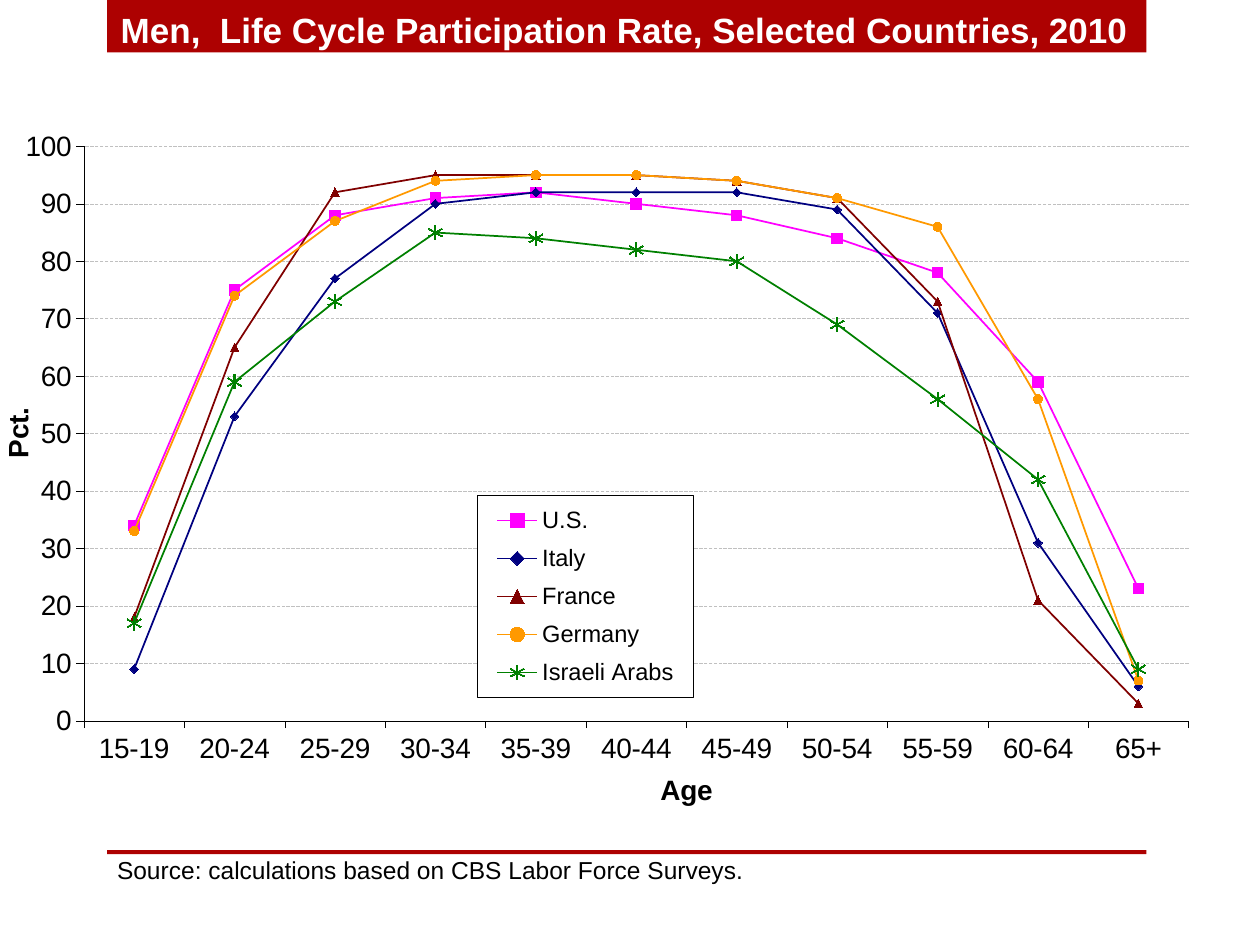
from dataclasses import dataclass

from pptx import Presentation
from pptx import util as u
from pptx.chart.data import CategoryChartData
from pptx.dml.color import RGBColor
from pptx.enum import chart as ch, dml, shapes, text
from pptx.oxml import parse_xml
from pptx.oxml.ns import nsdecls


@dataclass(frozen=True)
class Theme:
    font: str = "Arial"
    accent: str = "AD0101"
    ink: str = "000000"
    paper: str = "FFFFFF"
    grid: str = "C0C0C0"
    title_size: float = 20
    axis_size: float = 16
    legend_size: float = 13.5
    source_size: float = 14
    hairline: float = 0.25
    series_line: float = 1


AGES = ["15-19", "20-24", "25-29", "30-34", "35-39", "40-44",
        "45-49", "50-54", "55-59", "60-64", "65+"]
MARK = ch.XL_MARKER_STYLE
# country, colour, marker, marker size, participation rate by age
COUNTRIES = [
    ("U.S.", "FF00FF", MARK.SQUARE, 6, [34, 75, 88, 91, 92, 90, 88, 84, 78, 59, 23]),
    ("Italy", "000080", MARK.DIAMOND, 5, [9, 53, 77, 90, 92, 92, 92, 89, 71, 31, 6]),
    ("France", "800000", MARK.TRIANGLE, 5, [18, 65, 92, 95, 95, 95, 94, 91, 73, 21, 3]),
    ("Germany", "FF9900", MARK.CIRCLE, 5, [33, 74, 87, 94, 95, 95, 94, 91, 86, 56, 7]),
    ("Israeli Arabs", "008000", MARK.STAR, 8, [17, 59, 73, 85, 84, 82, 80, 69, 56, 42, 9]),
]


def style_font(font, theme, size, color, bold=False):
    font.name, font.size, font.bold = theme.font, u.Pt(size), bold
    font.color.rgb = RGBColor.from_string(color)


def write(frame, words, *, theme, size, color, bold=False, align=None):
    """Put one formatted paragraph into a text frame."""
    line = frame.paragraphs[0]
    line.alignment = align
    run = line.add_run()
    run.text = words
    style_font(run.font, theme, size, color, bold)


def stroke(line, color, width):
    line.color.rgb = RGBColor.from_string(color)
    line.width = u.Pt(width)


def place(part, index, x, y, w=None, h=None, inner=False):
    """Give a chart part a fixed place, in fractions of the chart."""
    for old in part.xpath("c:layout"):
        part.remove(old)
    size = f'<c:w val="{w}"/><c:h val="{h}"/>' if w else ""
    target = '<c:layoutTarget val="inner"/>' if inner else ""
    part.insert(index, parse_xml(
        f'<c:layout {nsdecls("c")}><c:manualLayout>{target}'
        '<c:xMode val="edge"/><c:yMode val="edge"/>'
        f'<c:x val="{x}"/><c:y val="{y}"/>{size}</c:manualLayout></c:layout>'))


class SlideBuilder:
    def __init__(self, slide, theme):
        self.slide, self.theme = slide, theme

    def bar(self, *box):
        band = self.slide.shapes.add_shape(
            shapes.MSO_SHAPE.RECTANGLE, *map(u.Cm, box))
        band.shadow.inherit = False
        band.fill.solid()
        band.fill.fore_color.rgb = RGBColor.from_string(self.theme.accent)
        band.line.fill.background()

    def title(self, words, *box):
        heading = self.slide.shapes.title
        heading.left, heading.top, heading.width, heading.height = map(u.Cm, box)
        heading.text_frame.vertical_anchor = text.MSO_ANCHOR.MIDDLE
        heading.text_frame.auto_size = text.MSO_AUTO_SIZE.SHAPE_TO_FIT_TEXT
        write(heading.text_frame, words, theme=self.theme,
              size=self.theme.title_size, color=self.theme.paper,
              bold=True, align=text.PP_ALIGN.CENTER)
        # Bring the title in front of its band
        heading.element.getparent().append(heading.element)

    def note(self, words, *box):
        source = self.slide.shapes.add_textbox(*map(u.Cm, box)).text_frame
        source.word_wrap = True
        source.auto_size = text.MSO_AUTO_SIZE.SHAPE_TO_FIT_TEXT
        write(source, words, theme=self.theme,
              size=self.theme.source_size, color=self.theme.ink)

    def axis(self, axis, caption):
        theme = self.theme
        write(axis.axis_title.text_frame, caption, theme=theme,
              size=theme.axis_size, color=theme.ink, bold=True)
        style_font(axis.tick_labels.font, theme, theme.axis_size, theme.ink)
        axis.tick_labels.number_format = "0"
        axis.tick_labels.number_format_is_linked = False
        axis.major_tick_mark = ch.XL_TICK_MARK.OUTSIDE
        stroke(axis.format.line, theme.ink, theme.hairline)

    def line_chart(self, *box):
        theme = self.theme
        data = CategoryChartData(number_format="0")
        data.categories = AGES
        for country, *_, rates in COUNTRIES:
            data.add_series(country, rates)
        chart = self.slide.shapes.add_chart(
            ch.XL_CHART_TYPE.LINE_MARKERS, *map(u.Cm, box), data).chart
        chart.has_title = False
        style_font(chart.font, theme, theme.axis_size, theme.ink)
        chart.plots[0].vary_by_categories = False

        # Country lines and markers
        for line, (_, color, symbol, size, _) in zip(chart.plots[0].series, COUNTRIES):
            line.smooth = False
            stroke(line.format.line, color, theme.series_line)
            line.marker.style, line.marker.size = symbol, size
            stroke(line.marker.format.line, color, theme.series_line)
            if symbol == MARK.STAR:
                line.marker.format.fill.background()
            else:
                line.marker.format.fill.solid()
                line.marker.format.fill.fore_color.rgb = RGBColor.from_string(color)

        # Axes and gridlines
        self.axis(chart.category_axis, "Age")
        self.axis(chart.value_axis, "Pct.")
        rate = chart.value_axis
        rate.minimum_scale, rate.maximum_scale, rate.major_unit = 0, 100, 10
        grid = rate.major_gridlines.format.line
        stroke(grid, theme.grid, theme.hairline)
        grid.dash_style = dml.MSO_LINE.LONG_DASH

        # Legend inside the plot
        chart.has_legend = True
        chart.legend.position = ch.XL_LEGEND_POSITION.RIGHT
        chart.legend.include_in_layout = False
        style_font(chart.legend.font, theme, theme.legend_size, theme.ink)

        # Fixed places for the chart parts; the rate title hugs the left edge
        plot, = chart.element.xpath("c:chart/c:plotArea")
        legend, = chart.element.xpath("c:chart/c:legend")
        age_title, = plot.xpath("c:catAx/c:title")
        rate_title, = plot.xpath("c:valAx/c:title")
        place(plot, 0, 0.07, 0.08, 0.87, 0.74, inner=True)
        place(legend, 1, 0.38, 0.53, 0.17, 0.26)
        place(age_title, 1, 0.52, 0.88)
        place(rate_title, 1, 0, 0.41)
        rate_title.xpath(".//a:bodyPr")[0].set("rot", "-5400000")
        legend.xpath("c:overlay")[0].addnext(parse_xml(
            f'<c:spPr {nsdecls("c", "a")}>'
            f'<a:solidFill><a:srgbClr val="{theme.paper}"/></a:solidFill>'
            f'<a:ln w="{u.Pt(theme.hairline)}"><a:solidFill>'
            f'<a:srgbClr val="{theme.ink}"/></a:solidFill></a:ln></c:spPr>'))


def main():
    deck = Presentation()
    deck.slide_width, deck.slide_height = u.Cm(25.4), u.Cm(19.05)
    title_only = deck.slide_layouts[5]
    page = SlideBuilder(deck.slides.add_slide(title_only), Theme())

    # Header band and footer rule
    page.bar(2.16, 0, 20.95, 1.06)
    page.bar(2.16, 17.14, 20.95, 0.08)
    page.title("Men,  Life Cycle Participation Rate, Selected Countries, 2010",
               0.89, 0.03, 23.4, 1.11)
    # Participation by age, then its source
    page.line_chart(-0.1, 1.7, 25.6, 15.65)
    page.note("Source: calculations based on CBS Labor Force Surveys.",
              2.11, 17.12, 19.4, 0.86)
    deck.save("out.pptx")


if __name__ == "__main__":
    main()
